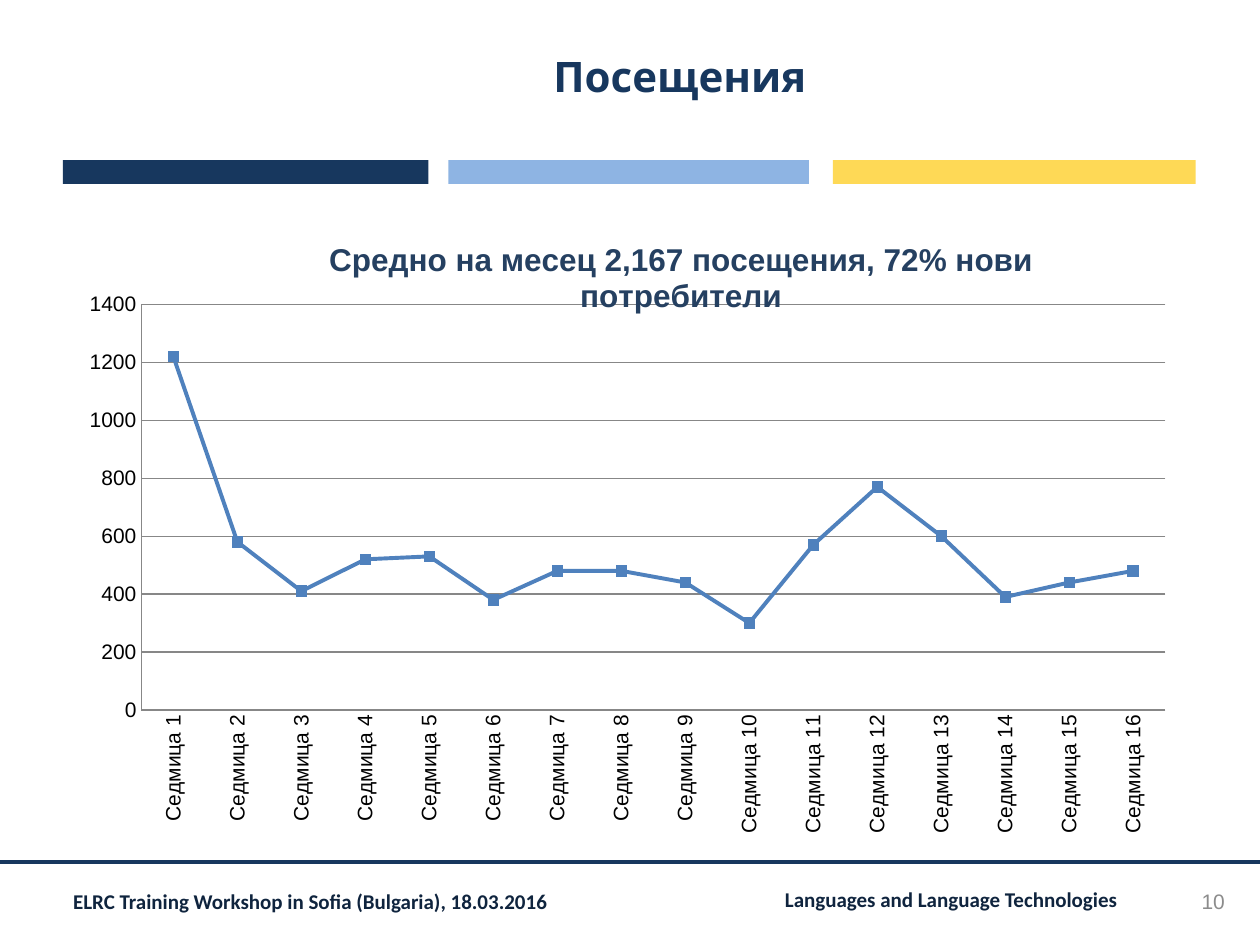
"""Build the weekly visits slide with its footer and line chart."""
from dataclasses import dataclass
from typing import Any, NamedTuple

from lxml.etree import SubElement
from pptx import Presentation
from pptx.chart.data import CategoryChartData
from pptx.dml.color import RGBColor
from pptx.enum.chart import XL_CHART_TYPE as ChartType
from pptx.enum.chart import XL_MARKER_STYLE as MarkerStyle
from pptx.enum.chart import XL_TICK_MARK as TickMark
from pptx.enum.shapes import MSO_CONNECTOR as Connector
from pptx.enum.shapes import MSO_SHAPE as ShapeType
from pptx.enum.text import MSO_ANCHOR as Anchor
from pptx.enum.text import PP_ALIGN as Align
from pptx.oxml import parse_xml
from pptx.oxml.ns import nsdecls, qn
from pptx.util import Inches, Pt


@dataclass(frozen=True)
class Theme:
    """Colours, fonts and type sizes of the slide."""
    navy: str = "17375E"
    sky: str = "8EB4E3"
    yellow: str = "FED956"
    footer: str = "0F243E"
    number: str = "8C8C8C"
    chart_title: str = "254061"
    series: str = "4F81BD"
    grid: str = "878787"
    black: str = "000000"
    heading_font: str = "Comic Neue"
    footer_font: str = "Calibri"
    chart_font: str = "Arial"
    heading_size: int = 24
    chart_title_size: int = 18
    small_size: int = 12


class Box(NamedTuple):
    """Left, top, width and height in inches."""
    left: float
    top: float
    width: float
    height: float

    def lengths(self) -> list:
        """Return the four values as lengths."""
        return [Inches(value) for value in self]


@dataclass(frozen=True)
class Bar:
    """A coloured bar under the title."""
    left: float
    width: float
    color: str


@dataclass(frozen=True)
class Label:
    """A line of text with its place and format."""
    text: str
    box: Box
    font: str
    size: int
    color: str
    bold: bool = False
    align: Any = Align.LEFT
    anchor: Any = Anchor.TOP
    margins: tuple = (0.08, 0.04)


THEME = Theme()
BARS = [Bar(0.5, 2.9, THEME.navy), Bar(3.56, 2.86, THEME.sky), Bar(6.61, 2.88, THEME.yellow)]
FOOTER = {"font": THEME.footer_font, "size": THEME.small_size, "color": THEME.footer, "bold": True}
TITLE = Label("Посещения ", Box(2.24, 0.14, 6.43, 0.92), THEME.heading_font, THEME.heading_size,
              THEME.navy, True, Align.CENTER, Anchor.MIDDLE, (0, 0))
LABELS = [
    Label("ELRC Training Workshop in Sofia (Bulgaria), 18.03.2016", Box(0.5, 7.01, 4.72, 0.27), **FOOTER),
    Label("Languages and Language Technologies", Box(6.15, 7, 2.95, 0.26), **FOOTER),
    Label("10", Box(7.49, 6.95, 2.33, 0.4), THEME.chart_font, THEME.small_size, THEME.number,
          align=Align.RIGHT, anchor=Anchor.MIDDLE, margins=(0.1, 0.05)),
]
CHART_BOX = Box(0.49, 1.65, 9.03, 5.11)
CHART_TITLE = "Средно на месец 2,167 посещения, 72% нови потребители"
VISITS = [1220, 580, 410, 520, 530, 380, 480, 480, 440, 300, 570, 770, 600, 390, 440, 480]


def apply_format(target: Any, values: dict) -> None:
    """Set each named attribute on the target."""
    for name, value in values.items():
        setattr(target, name, value)


def format_font(font: Any, name: str, size: int, color: str, bold: bool = False) -> None:
    """Set typeface, size, weight and colour."""
    apply_format(font, {"name": name, "size": Pt(size), "bold": bold})
    font.color.rgb = RGBColor.from_string(color)


def format_line(line: Any, color: str, width: float) -> None:
    """Set line colour and width in points."""
    line.color.rgb = RGBColor.from_string(color)
    line.width = Pt(width)


def write_label(shape: Any, label: Label) -> None:
    """Write a label into a text shape."""
    frame = shape.text_frame
    across, down = map(Inches, label.margins)
    apply_format(frame, {"word_wrap": True, "vertical_anchor": label.anchor,
                         "margin_left": across, "margin_right": across,
                         "margin_top": down, "margin_bottom": down})
    paragraph = frame.paragraphs[0]
    apply_format(paragraph, {"alignment": label.align, "space_before": Pt(0)})
    run = paragraph.add_run()
    run.text = label.text
    format_font(run.font, label.font, label.size, label.color, label.bold)


def add_bar(slide: Any, bar: Bar) -> None:
    """Draw one coloured bar."""
    shape = slide.shapes.add_shape(ShapeType.RECTANGLE, *Box(bar.left, 1.27, bar.width, 0.19).lengths())
    shape.shadow.inherit = False
    shape.fill.solid()
    shape.fill.fore_color.rgb = RGBColor.from_string(bar.color)
    shape.line.fill.background()


def add_footer_rule(slide: Any) -> None:
    """Draw the line above the footer."""
    rule = slide.shapes.add_connector(Connector.STRAIGHT, Inches(0), Inches(6.84), Inches(10), Inches(6.84))
    format_line(rule.line, THEME.navy, 2.25)
    SubElement(rule._element.spPr, qn("a:effectLst"))


def place_in_chart(element: Any, index: int, values: dict, inner: bool = False) -> None:
    """Give a chart part a manual layout in fractions of the chart."""
    for layout in element.findall(qn("c:layout")):
        element.remove(layout)
    target = '<c:layoutTarget val="inner"/>' if inner else ""
    modes = "".join(f'<c:{name}Mode val="edge"/>' for name in "xy")
    sizes = "".join(f'<c:{name} val="{value}"/>' for name, value in values.items())
    element.insert(index, parse_xml(
        f'<c:layout {nsdecls("c")}><c:manualLayout>{target}{modes}{sizes}</c:manualLayout></c:layout>'))


def add_visits_chart(slide: Any) -> None:
    """Draw the weekly visits as a line with markers."""
    data = CategoryChartData()
    data.categories = [f"Седмица {week}" for week in range(1, len(VISITS) + 1)]
    data.add_series("Series 1", VISITS)
    chart = slide.shapes.add_chart(ChartType.LINE_MARKERS, *CHART_BOX.lengths(), data).chart
    apply_format(chart, {"has_legend": False, "has_title": True})
    format_font(chart.font, THEME.chart_font, THEME.small_size, THEME.black)

    paragraph = chart.chart_title.text_frame.paragraphs[0]
    run = paragraph.add_run()
    run.text = CHART_TITLE
    format_font(run.font, THEME.chart_font, THEME.chart_title_size, THEME.chart_title, True)
    place_in_chart(chart.chart_title._element, 1, {"x": 0.23, "y": 0.04})
    place_in_chart(chart._chartSpace.chart.plotArea, 0, {"x": 0.07, "y": 0.15, "w": 0.9, "h": 0.63}, True)

    for axis in (chart.category_axis, chart.value_axis):
        apply_format(axis, {"major_tick_mark": TickMark.NONE, "minor_tick_mark": TickMark.NONE})
        format_font(axis.tick_labels.font, THEME.chart_font, THEME.small_size, THEME.black)
        format_line(axis.format.line, THEME.grid, 0.75)
    apply_format(chart.value_axis, {"minimum_scale": 0, "maximum_scale": 1400, "major_unit": 200,
                                    "has_major_gridlines": True})
    format_line(chart.value_axis.major_gridlines.format.line, THEME.grid, 0.75)
    chart.category_axis._element.find(qn("c:txPr")).find(qn("a:bodyPr")).set("rot", "-5400000")

    plot = chart.plots[0]
    plot.vary_by_categories = False
    series = plot.series[0]
    series.smooth = False
    format_line(series.format.line, THEME.series, 2.25)
    apply_format(series.marker, {"style": MarkerStyle.SQUARE, "size": 6})
    series.marker.format.fill.solid()
    series.marker.format.fill.fore_color.rgb = RGBColor.from_string(THEME.series)
    format_line(series.marker.format.line, THEME.series, 0.75)


def main() -> None:
    """Build and save the presentation."""
    presentation = Presentation()
    apply_format(presentation, {"slide_width": Inches(10), "slide_height": Inches(7.5)})
    slide = presentation.slides.add_slide(presentation.slide_layouts[5])
    title = slide.shapes.title
    apply_format(title, dict(zip(("left", "top", "width", "height"), TITLE.box.lengths())))
    write_label(title, TITLE)
    for bar in BARS:
        add_bar(slide, bar)
    add_footer_rule(slide)
    for label in LABELS:
        write_label(slide.shapes.add_textbox(*label.box.lengths()), label)
    add_visits_chart(slide)
    presentation.save("out.pptx")


if __name__ == "__main__":
    main()
